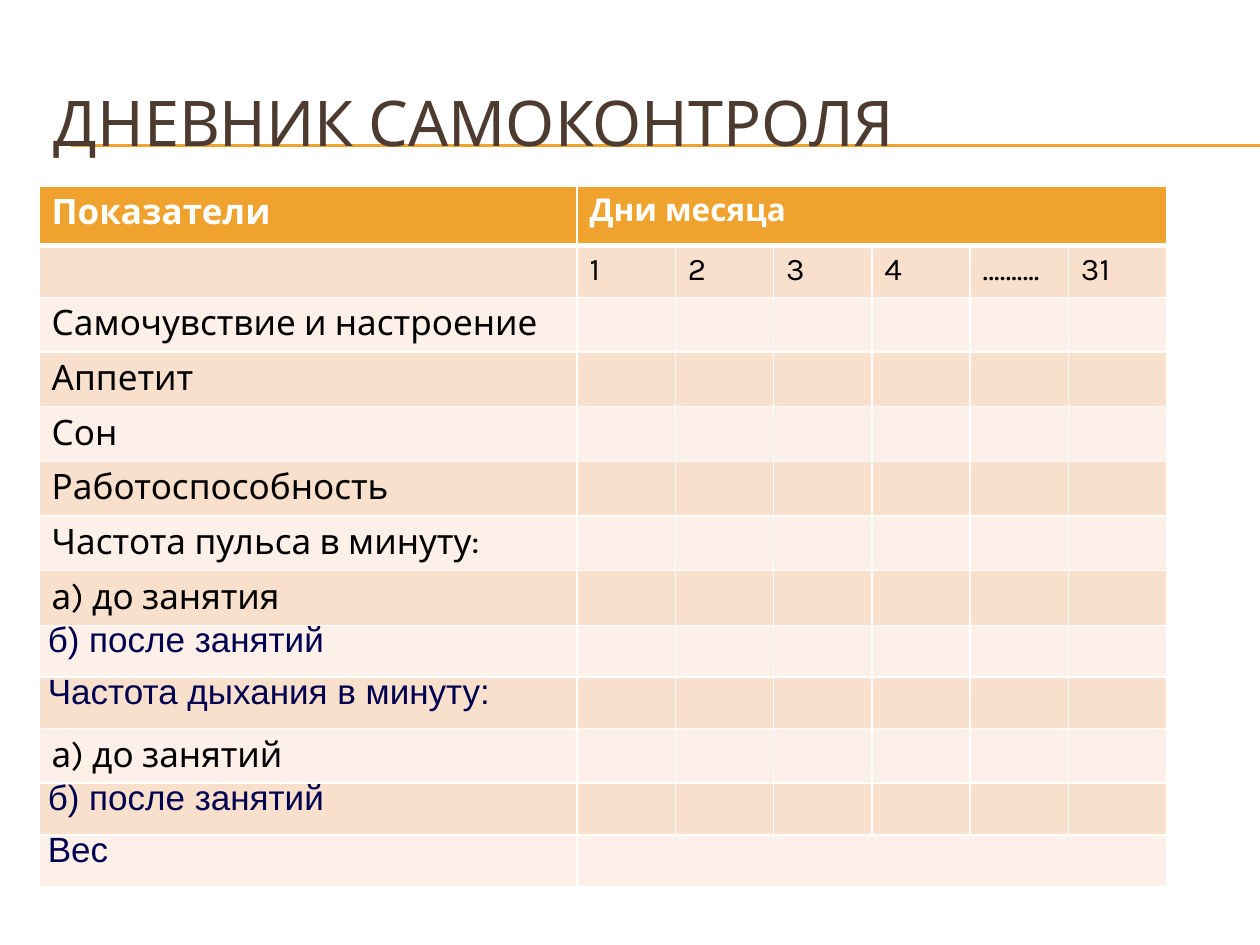
from lxml import etree
from pptx import Presentation
from pptx.dml.color import RGBColor
from pptx.enum.shapes import MSO_CONNECTOR
from pptx.enum.text import MSO_ANCHOR
from pptx.oxml.ns import qn
from pptx.util import Inches, Pt

STRAIGHT = MSO_CONNECTOR.STRAIGHT
MIDDLE = MSO_ANCHOR.MIDDLE

ORANGE = RGBColor(0xF0, 0xA2, 0x2E)
BROWN = RGBColor(0x4E, 0x3B, 0x30)
NAVY = RGBColor(0x00, 0x00, 0x51)
BLACK = RGBColor(0x00, 0x00, 0x00)
WHITE = RGBColor(0xFF, 0xFF, 0xFF)
BANDS = (RGBColor(0xFC, 0xF0, 0xE8), RGBColor(0xF9, 0xE0, 0xCD))

DAYS = ["1", "2", "3", "4", "……….", "31"]
# Indicator and whether it is set in the tight Arial style
INDICATORS = [
    ("Самочувствие и настроение", False),
    ("Аппетит", False),
    ("Сон", False),
    ("Работоспособность", False),
    ("Частота пульса в минуту:", False),
    ("а) до занятия", False),
    ("б) после занятий", True),
    ("Частота дыхания в минуту:", True),
    ("а) до занятий", False),
    ("б) после занятий", True),
    ("Вес", True),
]


def write(frame, text, size, color, font="Karla", bold=False):
    paragraph = frame.paragraphs[0]
    paragraph.text = text
    style = paragraph.runs[0].font
    style.name, style.size, style.bold = font, Pt(size), bold
    style.color.rgb = color
    return paragraph


def add_title(slide, left, top, width, height):
    # Double rule running to the right edge of the slide
    for y in (1.15, 1.16):
        rule = slide.shapes.add_connector(
            STRAIGHT, Inches(0.56), Inches(y), Inches(10), Inches(y))
        rule.line.color.rgb = ORANGE
        rule.line.width = Pt(0.75)
        etree.SubElement(rule._element.spPr, qn("a:effectLst"))

    title = slide.shapes.add_textbox(left, top, width, height)
    title.text_frame.word_wrap = True
    title.text_frame.vertical_anchor = MIDDLE
    write(title.text_frame, "ДНЕВНИК САМОКОНТРОЛЯ", 36, BROWN)


def set_borders(cell, top=1, bottom=1):
    properties = cell._tc.get_or_add_tcPr()
    sides = (("L", 1), ("R", 1), ("T", top), ("B", bottom))
    for position, (side, width) in enumerate(sides):
        border = etree.Element(qn(f"a:ln{side}"), w=str(Pt(width)))
        fill = etree.SubElement(border, qn("a:solidFill"))
        etree.SubElement(fill, qn("a:srgbClr"), val=str(WHITE))
        properties.insert(position, border)


def add_diary(slide, left, top, width, height):
    row_count = len(INDICATORS) + 2
    diary = slide.shapes.add_table(
        row_count, len(DAYS) + 1, left, top, width, height).table

    # Grid: wide indicator column, equal day columns
    day_width = Inches(0.78)
    for column in diary.columns:
        column.width = day_width
    diary.columns[0].width = width - day_width * len(DAYS)
    for row in diary.rows:
        row.height = Inches(0.41)
    diary.rows[0].height = Inches(0.47)

    # Fills and borders, with a thick line under the header
    for index, row in enumerate(diary.rows):
        for cell in row.cells:
            cell.fill.solid()
            cell.fill.fore_color.rgb = BANDS[index % 2] if index else ORANGE
            set_borders(cell, top=3 if index == 1 else 1,
                        bottom=1 if index else 3)

    # Header and last row span all days
    for index in (0, row_count - 1):
        diary.cell(index, 1).merge(diary.cell(index, len(DAYS)))
    write(diary.cell(0, 0).text_frame, "Показатели", 20, WHITE, bold=True)
    write(diary.cell(0, 1).text_frame, "Дни месяца", 18, WHITE, bold=True)

    # Day numbers
    for column, day in enumerate(DAYS, 1):
        write(diary.cell(1, column).text_frame, day, 18, BLACK)

    # Indicators
    for index, (indicator, tight) in enumerate(INDICATORS, 2):
        cell = diary.cell(index, 0)
        if tight:
            cell.margin_left = cell.margin_right = Inches(0.07)
            cell.margin_top = cell.margin_bottom = Inches(0.07)
            paragraph = write(cell.text_frame, indicator, 20, NAVY, "Arial")
            paragraph.line_spacing = Pt(15)
        else:
            write(cell.text_frame, indicator, 20, BLACK)


def main():
    deck = Presentation()
    deck.slide_width, deck.slide_height = Inches(10), Inches(7.5)
    slide = deck.slides.add_slide(deck.slide_layouts[6])
    add_title(slide, Inches(0.33), Inches(0.5), Inches(9.5), Inches(0.92))
    add_diary(slide, Inches(0.31), Inches(1.48), Inches(8.95), Inches(5.39))
    deck.save("out.pptx")


if __name__ == "__main__":
    main()
